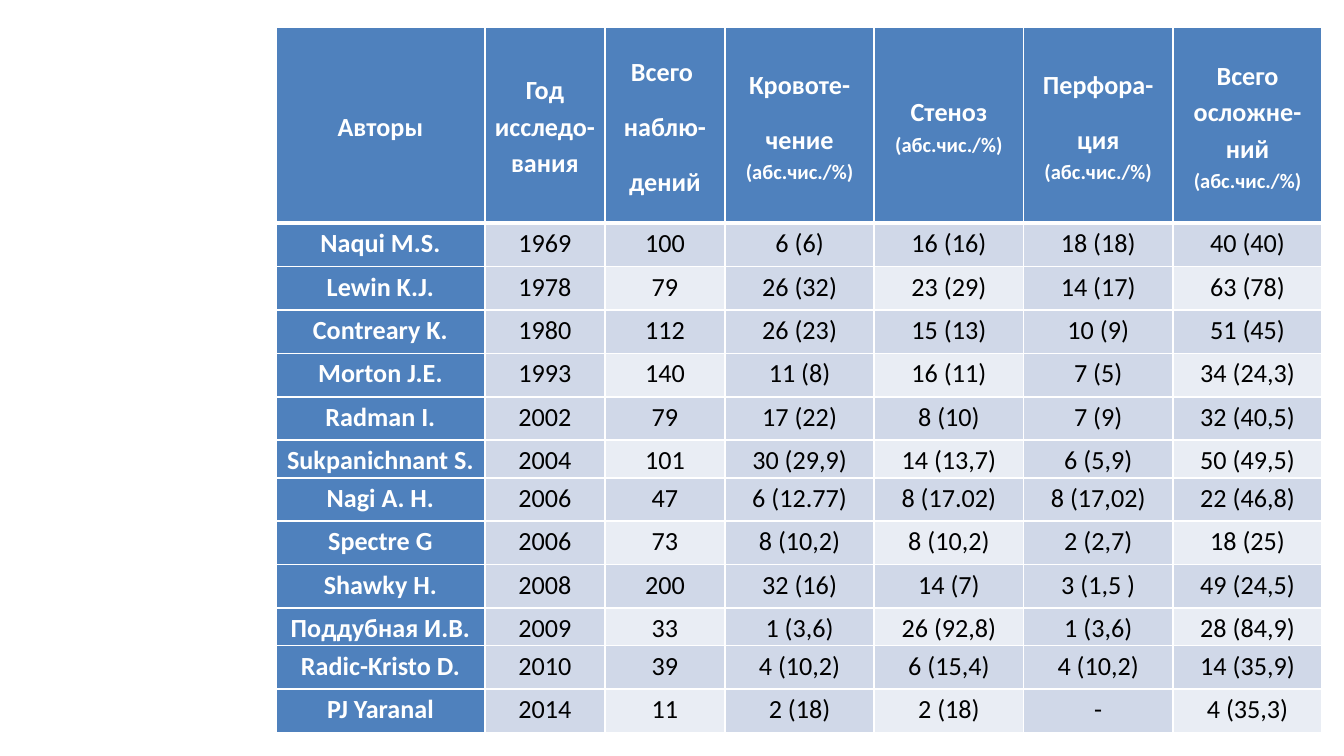
from lxml.etree import SubElement as Sub
from pptx import Presentation
from pptx.dml.color import RGBColor as RGB
from pptx.enum.text import MSO_ANCHOR as Anchor, PP_ALIGN as Align
from pptx.oxml.ns import qn
from pptx.util import Pt

WHITE = RGB(0xFF, 0xFF, 0xFF)
BLACK = RGB(0x00, 0x00, 0x00)
BLUE = RGB(0x4F, 0x81, 0xBD)
BAND = RGB(0xD0, 0xD8, 0xE8)
PALE = RGB(0xE9, 0xED, 0xF4)

FONT = "Calibri"
UNIT = "(абс.чис./%)"
WIDTHS = [112, 64.3, 64.3, 80, 80, 80, 80]
TOP, TALL, SHORT = 105.1, 23.3, 20.1
TIGHT = (6, 10)  # body rows with the smaller height

# Each heading: its paragraphs, and whether the unit follows
HEADS = [
    (["Авторы"], False),
    (["Год исследо-вания"], False),
    (["Всего ", "наблю-", "дений"], False),
    (["Кровоте-", "чение "], True),
    (["Стеноз "], True),
    (["Перфора-", "ция "], True),
    (["Всего осложне-ний "], True),
]

STUDIES = [
    ("Naqui M.S.", "1969", "100", "6 (6)", "16 (16)", "18 (18)", "40 (40)"),
    ("Lewin K.J.", "1978", "79", "26 (32)", "23 (29)", "14 (17)", "63 (78)"),
    ("Contreary K.", "1980", "112", "26 (23)", "15 (13)", "10 (9)", "51 (45)"),
    ("Morton J.E.", "1993", "140", "11 (8)", "16 (11)", "7 (5)", "34 (24,3)"),
    ("Radman I.", "2002", "79", "17 (22)", "8 (10)", "7 (9)", "32 (40,5)"),
    ("Sukpanichnant S.", "2004", "101", "30 (29,9)", "14 (13,7)", "6 (5,9)", "50 (49,5)"),
    ("Nagi A. H.", "2006", "47", "6 (12.77)", "8 (17.02)", "8 (17,02)", "22 (46,8)"),
    ("Spectre G", "2006", "73", "8 (10,2)", "8 (10,2)", "2 (2,7)", "18 (25)"),
    ("Shawky H.", "2008", "200", "32 (16)", "14 (7)", "3 (1,5 )", "49 (24,5)"),
    ("Поддубная И.В.", "2009", "33", "1 (3,6)", "26 (92,8)", "1 (3,6)", "28 (84,9)"),
    ("Radic-Kristo D.", "2010", "39", "4 (10,2)", "6 (15,4)", "4 (10,2)", "14 (35,9)"),
    ("PJ Yaranal", "2014", "11", "2 (18)", "2 (18)", "-", "4 (35,3)"),
]


def write(para, text, size=14, color=WHITE, bold=True):
    """Add a run and lay out its paragraph."""
    para.alignment = Align.CENTER
    para.line_spacing = 1.15
    para.space_after = Pt(10)
    run = para.add_run()
    run.text = text
    font = run.font
    font.name, font.size, font.bold = FONT, Pt(size), bold
    font.color.rgb = color


def edge(cell, top=1, base=1):
    """Draw white borders; these come before the fill in the XML."""
    props = cell._tc.get_or_add_tcPr()
    for side, width in (("L", 1), ("R", 1), ("T", top), ("B", base)):
        line = Sub(props, qn(f"a:ln{side}"), w=str(Pt(width)))
        fill = Sub(line, qn("a:solidFill"))
        Sub(fill, qn("a:srgbClr"), val=str(WHITE))


def dress(cell, color, **lines):
    """Set the borders, fill and insets of a cell."""
    edge(cell, **lines)
    cell.fill.solid()
    cell.fill.fore_color.rgb = color
    cell.margin_left = cell.margin_right = Pt(5)
    cell.margin_top = cell.margin_bottom = Pt(0)


def head(table):
    """Fill the heading row."""
    for col, (parts, unit) in enumerate(HEADS):
        cell = table.cell(0, col)
        dress(cell, BLUE, base=3)
        cell.vertical_anchor = Anchor.MIDDLE
        frame = cell.text_frame
        for i, part in enumerate(parts):
            para = frame.add_paragraph() if i else frame.paragraphs[0]
            write(para, part)
        if unit:
            write(para, UNIT, size=11)


def body(table):
    """Fill the study rows; every other column is banded by row."""
    for row, study in enumerate(STUDIES, 1):
        for col, text in enumerate(study):
            name = col == 0
            pale = row % 2 == 0 and col % 2 == 0
            cell = table.cell(row, col)
            dress(cell, BLUE if name else PALE if pale else BAND,
                  top=3 if row == 1 else 1)
            write(cell.text_frame.paragraphs[0], text,
                  color=WHITE if name else BLACK, bold=name)


def grid(slide):
    """Add the table with its column widths and row heights."""
    rows = [TOP] + [SHORT if i in TIGHT else TALL
                    for i in range(1, len(STUDIES) + 1)]
    table = slide.shapes.add_table(
        len(rows), len(WIDTHS), Pt(147.8), Pt(14.4),
        Pt(sum(WIDTHS)), Pt(sum(rows))).table
    for col, width in zip(table.columns, WIDTHS):
        col.width = Pt(width)
    for row, height in zip(table.rows, rows):
        row.height = Pt(height)
    return table


def main():
    prs = Presentation()
    prs.slide_width, prs.slide_height = Pt(720), Pt(405)
    slide = prs.slides.add_slide(prs.slide_layouts[6])

    # Table of complications by study
    table = grid(slide)
    head(table)
    body(table)

    prs.save("out.pptx")


if __name__ == "__main__":
    main()
